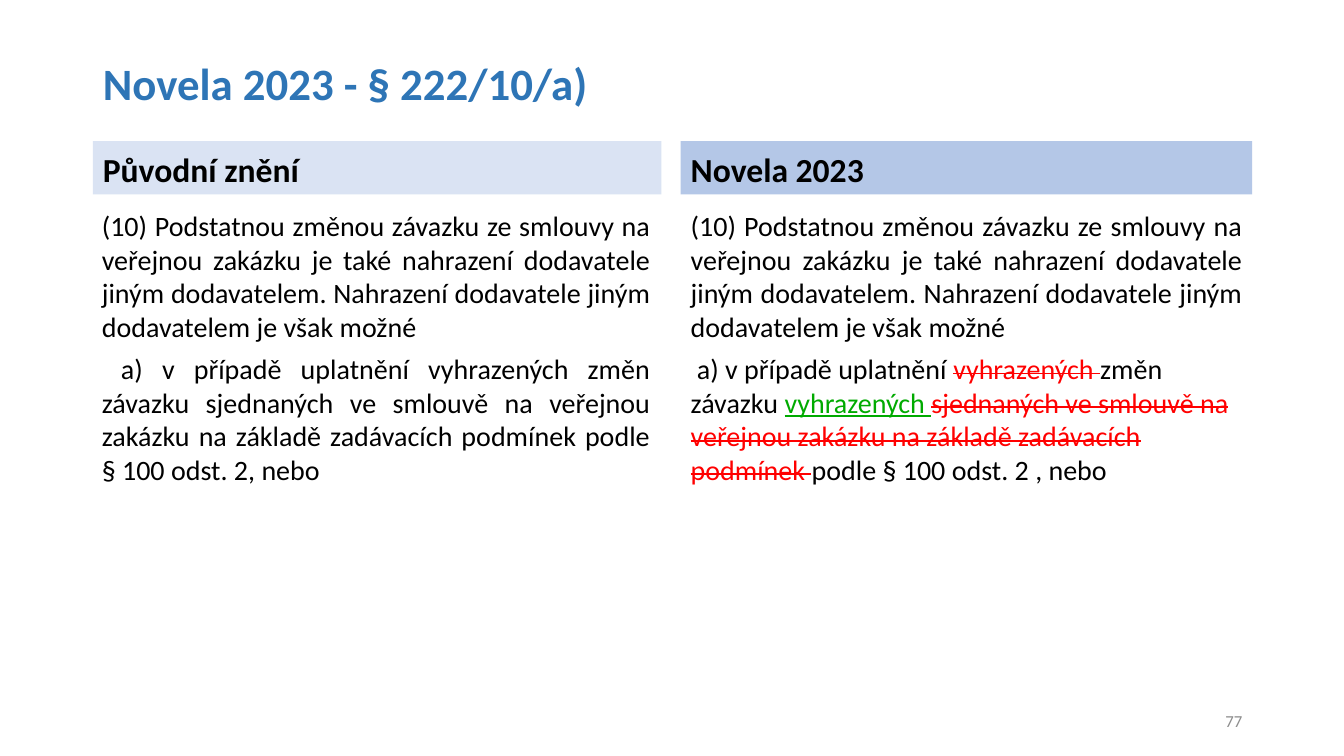
from lxml.etree import SubElement
from pptx import Presentation
from pptx.dml.color import RGBColor
from pptx.enum.text import MSO_ANCHOR, MSO_AUTO_SIZE, PP_ALIGN
from pptx.oxml.ns import qn
from pptx.util import Pt

PX = 9144
FONT = "Calibri"
BLUE = RGBColor(0x2E, 0x75, 0xB6)
PALE_BLUE = RGBColor(0xDA, 0xE3, 0xF3)
MID_BLUE = RGBColor(0xB4, 0xC7, 0xE7)
BLACK = RGBColor(0, 0, 0)
RED = RGBColor(0xFF, 0, 0)
GREEN = RGBColor(0, 0xAA, 0)
GRAY = RGBColor(0x8C, 0x8C, 0x8C)

INTRODUCTION = (
    "(10) Podstatnou změnou závazku ze smlouvy na veřejnou zakázku je také "
    "nahrazení dodavatele jiným dodavatelem. Nahrazení dodavatele jiným "
    "dodavatelem je však možné"
)
KEPT, DELETED, INSERTED = "kept", "deleted", "inserted"
MARK_COLORS = {KEPT: BLACK, DELETED: RED, INSERTED: GREEN}
OLD_CLAUSE = [
    (" a) v případě uplatnění vyhrazených změn závazku sjednaných ve smlouvě "
     "na veřejnou zakázku na základě zadávacích podmínek podle § 100 odst. 2, nebo", KEPT),
]
NEW_CLAUSE = [
    (" a) v případě uplatnění ", KEPT),
    ("vyhrazených ", DELETED),
    ("změn závazku ", KEPT),
    ("vyhrazených ", INSERTED),
    ("sjednaných ve smlouvě na veřejnou zakázku na základě zadávacích podmínek ", DELETED),
    ("podle § 100 odst. 2 , nebo", KEPT),
]


def place(shape, left, top, width, height, anchor):
    shape.left, shape.top = left * PX, top * PX
    shape.width, shape.height = width * PX, height * PX
    frame = shape.text_frame
    frame.word_wrap = True
    frame.auto_size = MSO_AUTO_SIZE.NONE
    frame.vertical_anchor = anchor
    return frame


def format_paragraph(paragraph, alignment, line_spacing=1.0, before=0, after=0):
    paragraph.alignment = alignment
    paragraph.line_spacing = line_spacing
    paragraph.space_before = Pt(before)
    paragraph.space_after = Pt(after)
    properties = paragraph._p.get_or_add_pPr()
    properties.set("marL", "0")
    properties.set("indent", "0")
    SubElement(properties, qn("a:buNone"))


def add_run(paragraph, text, size, color, bold=False):
    run = paragraph.add_run()
    run.text = text
    run.font.name = FONT
    run.font.size = Pt(size)
    run.font.bold = bold
    run.font.color.rgb = color
    return run


def add_line(frame, text, size, color, alignment=PP_ALIGN.LEFT, bold=True, **spacing):
    paragraph = frame.paragraphs[0]
    format_paragraph(paragraph, alignment, **spacing)
    add_run(paragraph, text, size, color, bold)


def fill_heading(shape, left, width, text, color):
    frame = place(shape, left, 140, width, 53, MSO_ANCHOR.BOTTOM)
    shape.fill.solid()
    shape.fill.fore_color.rgb = color
    add_line(frame, text, 24, BLACK, line_spacing=0.9, before=10)


def fill_wording(shape, left, width, clause, clause_alignment):
    frame = place(shape, left, 202, width, 478, MSO_ANCHOR.TOP)
    add_line(frame, INTRODUCTION, 20, BLACK, PP_ALIGN.JUSTIFY, bold=False, after=6)
    paragraph = frame.add_paragraph()
    format_paragraph(paragraph, clause_alignment, after=6)
    for text, mark in clause:
        run = add_run(paragraph, text, 20, MARK_COLORS[mark])
        if mark == INSERTED:
            run.font.underline = True
        elif mark == DELETED:
            run._r.get_or_add_rPr().set("strike", "sngStrike")


def add_page_number(slide, text):
    shape = slide.shapes.add_textbox(0, 0, 0, 0)
    frame = place(shape, 942, 695, 300, 40, MSO_ANCHOR.MIDDLE)
    add_line(frame, text, 12, GRAY, PP_ALIGN.RIGHT, bold=False)


def main():
    presentation = Presentation()
    presentation.slide_width = 1333 * PX
    presentation.slide_height = 750 * PX
    slide = presentation.slides.add_slide(presentation.slide_layouts[4])
    title, old_heading, old_wording, new_heading, new_wording = slide.placeholders

    title_frame = place(title, 92, 40, 1150, 90, MSO_ANCHOR.MIDDLE)
    add_line(title_frame, "Novela 2023 - § 222/10/a)", 32, BLUE, line_spacing=0.9)
    fill_heading(old_heading, 92, 564, "Původní znění", PALE_BLUE)
    fill_wording(old_wording, 91, 564, OLD_CLAUSE, PP_ALIGN.JUSTIFY)
    fill_heading(new_heading, 675, 567, "Novela 2023", MID_BLUE)
    fill_wording(new_wording, 675, 567, NEW_CLAUSE, PP_ALIGN.LEFT)
    add_page_number(slide, "77")
    presentation.save("out.pptx")


if __name__ == "__main__":
    main()
